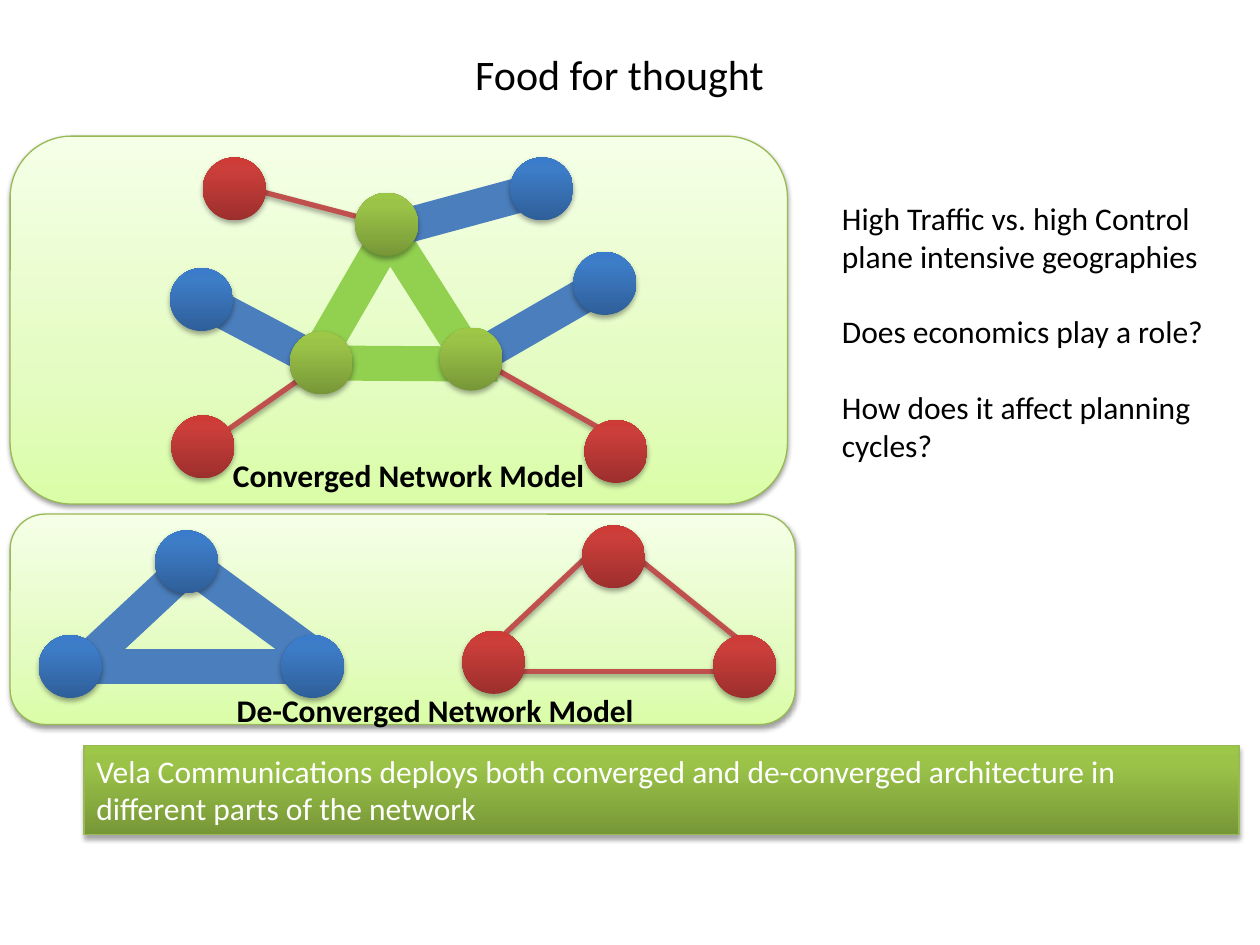
from copy import deepcopy

from lxml import etree
from pptx import Presentation
from pptx.dml.color import RGBColor
from pptx.enum import shapes, text
from pptx.oxml import ns
from pptx.util import Pt

BLACK = RGBColor(0x00, 0x00, 0x00)
WHITE = RGBColor(0xFF, 0xFF, 0xFF)
OUTLINE = RGBColor(0x98, 0xB9, 0x55)
RED_LINK = RGBColor(0xC0, 0x50, 0x4D)
BLUE_LINK = RGBColor(0x4B, 0x7E, 0xBC)
GREEN_LINK = RGBColor(0x92, 0xD0, 0x50)
# Gradients run from bottom to top
PALE = [RGBColor(0xDA, 0xFD, 0xA7), RGBColor(0xE4, 0xFC, 0xC2), RGBColor(0xF5, 0xFF, 0xE7)]
RED = [RGBColor(0x9C, 0x2F, 0x2D), RGBColor(0xCB, 0x3E, 0x3A), RGBColor(0xCE, 0x3B, 0x37)]
BLUE = [RGBColor(0x2F, 0x5F, 0x99), RGBColor(0x3D, 0x7C, 0xC7), RGBColor(0x3A, 0x7C, 0xCB)]
GREEN = [RGBColor(0x77, 0x97, 0x37), RGBColor(0x9B, 0xC3, 0x48), RGBColor(0x9D, 0xC7, 0x46)]
NODE = 36

deck = Presentation()
deck.slide_width, deck.slide_height = Pt(720), Pt(540)
slide = deck.slides.add_slide(deck.slide_layouts[6])


def add_effects(properties, opacity=None):
    """Give an empty effect list, or a soft shadow below when opacity is set."""
    effects = etree.SubElement(properties, ns.qn("a:effectLst"))
    if opacity:
        shadow = etree.SubElement(effects, ns.qn("a:outerShdw"), blurRad=str(Pt(3.1)),
                                  dist=str(Pt(1.7)), dir="5400000", rotWithShape="0")
        black = etree.SubElement(shadow, ns.qn("a:srgbClr"), val="000000")
        etree.SubElement(black, ns.qn("a:alpha"), val=str(opacity * 1000))


def add_glossy(kind, box, colors, middle, opacity, outlined):
    shape = slide.shapes.add_shape(kind, *map(Pt, box))
    shape.fill.gradient()
    shape.fill.gradient_angle = 90
    first = shape._element.spPr.find(".//" + ns.qn("a:gs"))
    first.addnext(deepcopy(first))
    for stop, color, position in zip(shape.fill.gradient_stops, colors, (0, middle, 1)):
        stop.color.rgb = color
        stop.position = position
    if outlined:
        shape.line.color.rgb = OUTLINE
        shape.line.width = Pt(0.75)
    else:
        shape.line.fill.background()
    add_effects(shape._element.spPr, opacity)
    return shape


# Panels of the two models
for panel in [(5.8, 293.8, 448.6, 120.2), (5.8, 77.8, 444.2, 210.2)]:
    add_glossy(shapes.MSO_SHAPE.ROUNDED_RECTANGLE, panel, PALE, 0.35, 38, True)

# Links: thin red ones with a shadow, thick green and blue ones without
links = [
    (RED_LINK, 3, 35, [
        (265.7, 200.9, 354.2, 251.3), (115.9, 255.6, 183.6, 208.1),
        (132.5, 105.1, 221, 128.2), (282.2, 383.8, 429.1, 383.8),
        (355.7, 311.8, 430.6, 372.2), (342, 311.8, 277.9, 372.2)]),
    (GREEN_LINK, 20, None, [
        (180, 206.6, 225.4, 128.2), (180, 207.4, 284.4, 208.1),
        (265.7, 200.9, 221.8, 131.8)]),
    (BLUE_LINK, 20, None, [
        (115.2, 171.4, 183.6, 207.4), (265.7, 208.1, 345.6, 162),
        (221.8, 131.8, 309.6, 108), (40.3, 380.9, 177.8, 380.9),
        (106.6, 321.1, 187.9, 380.9), (110.2, 321.1, 46.1, 380.9)]),
]
for color, width, opacity, ends in links:
    for end in ends:
        link = slide.shapes.add_connector(shapes.MSO_CONNECTOR.STRAIGHT, *map(Pt, end))
        link.line.color.rgb = color
        link.line.width = Pt(width)
        add_effects(link._element.spPr, opacity)

# Nodes, by left and top
nodes = [
    (BLUE, [(97.2, 153.2), (327.6, 144), (291.6, 90),
            (22.1, 362.9), (88.6, 303.1), (160.6, 362.9)]),
    (RED, [(97.9, 237.4), (334, 240), (115.9, 90),
           (264.2, 360.5), (407.5, 362.9), (332.6, 300.2)]),
    (GREEN, [(165.6, 189.4), (251.3, 187.2), (203, 110.2)]),
]
for colors, corners in nodes:
    for left, top in corners:
        add_glossy(shapes.MSO_SHAPE.OVAL, (left, top, NODE, NODE), colors, 0.8, 35, False)

# Conclusion banner
banner = add_glossy(shapes.MSO_SHAPE.RECTANGLE, (48, 426, 660, 51), GREEN, 0.8, 35, True)

# Title, questions and model captions
title = slide.shapes.add_textbox(Pt(72), Pt(24), Pt(564), Pt(36))
questions = slide.shapes.add_textbox(Pt(474), Pt(110.2), Pt(234), Pt(160))
converged = slide.shapes.add_textbox(Pt(126), Pt(257), Pt(221), Pt(29))
deconverged = slide.shapes.add_textbox(Pt(128.2), Pt(391.2), Pt(247), Pt(29))

LEFT, CENTER = text.PP_ALIGN.LEFT, text.PP_ALIGN.CENTER
TOP, MIDDLE = text.MSO_ANCHOR.TOP, text.MSO_ANCHOR.MIDDLE
wording = [
    (title, ["Food for thought"], 24, BLACK, False, CENTER, MIDDLE, True),
    (banner, ["Vela Communications deploys both converged and de-converged "
              "architecture in different parts of the network"],
     18, WHITE, False, LEFT, TOP, True),
    (questions, ["High Traffic vs. high Control plane intensive geographies",
                 "Does economics play a role?",
                 "How does it affect planning cycles?"],
     18, BLACK, False, LEFT, TOP, True),
    (converged, ["Converged Network Model"], 18, BLACK, True, LEFT, TOP, False),
    (deconverged, ["De-Converged Network Model"], 18, BLACK, True, LEFT, TOP, False),
]
for part, lines, size, color, bold, align, anchor, wrap in wording:
    frame = part.text_frame
    frame.word_wrap = wrap
    frame.vertical_anchor = anchor
    frame.text = "\n".join(lines)
    for index, paragraph in enumerate(frame.paragraphs):
        paragraph.alignment = align
        if index:
            paragraph.space_before = Pt(21.6)
        paragraph.font.name = "Calibri"
        paragraph.font.size = Pt(size)
        paragraph.font.bold = bold
        paragraph.font.color.rgb = color

deck.save("out.pptx")
